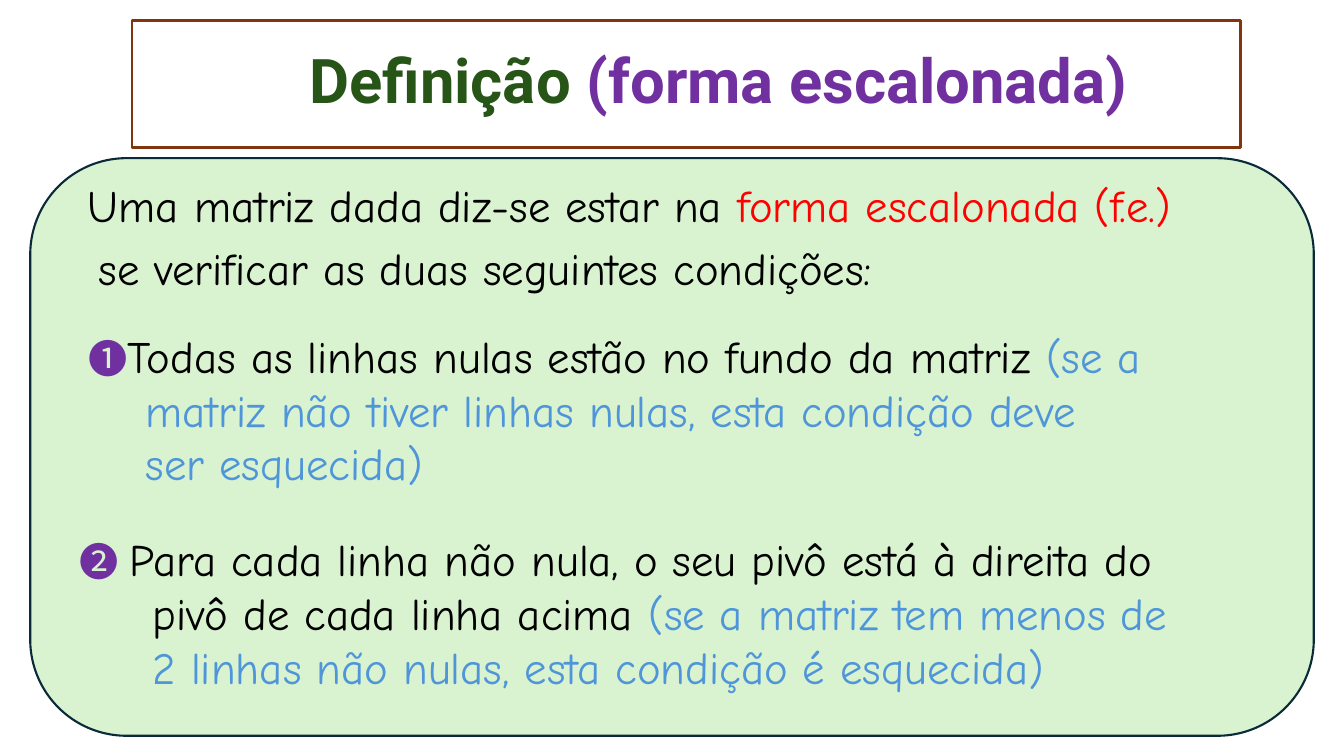
from dataclasses import dataclass

from lxml import etree
from pptx import Presentation
from pptx.dml.color import RGBColor
from pptx.enum.shapes import MSO_SHAPE
from pptx.enum.text import MSO_ANCHOR, PP_ALIGN
from pptx.oxml.ns import qn
from pptx.util import Inches, Pt

ROUNDED = MSO_SHAPE.ROUNDED_RECTANGLE
RECTANGLE = MSO_SHAPE.RECTANGLE
TOP, MIDDLE = MSO_ANCHOR.TOP, MSO_ANCHOR.MIDDLE
LEFT = PP_ALIGN.LEFT

WHITE = RGBColor(0xFF, 0xFF, 0xFF)
BLACK = RGBColor(0x00, 0x00, 0x00)
RED = RGBColor(0xFF, 0x00, 0x00)
PURPLE = RGBColor(0x70, 0x30, 0xA0)
BLUE = RGBColor(0x4E, 0x95, 0xD9)
DARK_GREEN = RGBColor(0x27, 0x54, 0x17)
PALE_GREEN = RGBColor(0xD9, 0xF2, 0xD0)
NAVY = RGBColor(0x09, 0x2A, 0x39)
BROWN = RGBColor(0x80, 0x35, 0x0E)

SLIDE_WIDTH, SLIDE_HEIGHT = Inches(13.33), Inches(7.5)

# Font formats by role
TITLE = {"name": "Roboto", "size": Pt(44), "bold": True}
BODY = {"name": "Comic Neue", "size": Pt(32)}
MARKER = {"name": "Noto Sans CJK JP", "size": Pt(28)}


@dataclass(frozen=True)
class Box:
    """Position and size in percent of the slide's width and height."""
    left: float
    top: float
    width: float
    height: float

    def lengths(self) -> tuple[int, int, int, int]:
        return (across(self.left), down(self.top),
                across(self.width), down(self.height))


@dataclass(frozen=True)
class Span:
    text: str
    color: RGBColor = BLACK
    style: dict = None


@dataclass(frozen=True)
class Line:
    """One line of text; indent and tab in percent of the slide's width."""
    spans: tuple[Span, ...]
    indent: float = 0
    tab: float = 0
    spacing: float = 1.0
    before: float = 0


@dataclass(frozen=True)
class TextBlock:
    box: Box
    lines: tuple[Line, ...]


def across(percent: float) -> int:
    return int(SLIDE_WIDTH * percent / 100)


def down(percent: float) -> int:
    return int(SLIDE_HEIGHT * percent / 100)


def add_panel(slide, kind, box: Box, fill: RGBColor, line: RGBColor, weight: float):
    shape = slide.shapes.add_shape(kind, *box.lengths())
    shape.shadow.inherit = False
    shape.fill.solid()
    shape.fill.fore_color.rgb = fill
    shape.line.color.rgb = line
    shape.line.width = Pt(weight)
    return shape


def add_span(paragraph, span: Span) -> None:
    run = paragraph.add_run()
    run.text = span.text
    run.font.color.rgb = span.color
    style = span.style or BODY
    for attribute, value in style.items():
        setattr(run.font, attribute, value)
    # East Asian typeface, used for the circled digits
    east_asian = etree.SubElement(run.font._element, qn("a:ea"))
    east_asian.set("typeface", style["name"])


def write_lines(shape, lines: tuple[Line, ...], anchor) -> None:
    frame = shape.text_frame
    frame.word_wrap = True
    frame.vertical_anchor = anchor
    for index, line in enumerate(lines):
        paragraph = frame.add_paragraph() if index else frame.paragraphs[0]
        paragraph.alignment = LEFT
        paragraph.line_spacing = line.spacing
        paragraph.space_before = Pt(line.before)
        properties = paragraph._p.get_or_add_pPr()
        properties.set("marL", str(across(line.indent)))
        properties.set("indent", "0")
        if line.tab:
            stops = etree.SubElement(properties, qn("a:tabLst"))
            etree.SubElement(stops, qn("a:tab"), pos=str(across(line.tab)), algn="l")
        for span in line.spans:
            add_span(paragraph, span)


HEADING = Line((Span("Definição ", DARK_GREEN, TITLE),
                Span("(forma escalonada)", PURPLE, TITLE)), indent=12.45, spacing=0.9)

BLOCKS = (
    # Introduction
    TextBlock(Box(4.5, 23.6, 91.07, 33.07), (
        Line((Span("Uma matriz dada diz-se estar na "),
              Span("forma escalonada (f.e.)", RED)), indent=1.3, spacing=0.9, before=13),
        Line((Span("se verificar as duas seguintes condições:"),),
             indent=2.1, spacing=0.9, before=11),
    )),
    # First condition
    TextBlock(Box(5.85, 42.8, 86.42, 26.93), (
        Line((Span("➊", PURPLE, MARKER),
              Span("Todas as linhas nulas estão no fundo da matriz "),
              Span("(se a", BLUE))),
        Line((Span("matriz não tiver linhas nulas, esta condição deve", BLUE),), indent=4.25),
        Line((Span("ser esquecida)", BLUE),), indent=4.25),
    )),
    # Second condition
    TextBlock(Box(5.18, 69.73, 88.37, 26.93), (
        Line((Span("➋\t", PURPLE, MARKER),
              Span("Para cada linha não nula, o seu pivô está à direita do")), tab=4.2),
        Line((Span("pivô de cada linha acima "),
              Span("(se a matriz tem menos de", BLUE)), indent=5.45),
        Line((Span("2 linhas não nulas, esta condição é esquecida)", BLUE),), indent=5.45),
    )),
)


def main() -> None:
    presentation = Presentation()
    presentation.slide_width = SLIDE_WIDTH
    presentation.slide_height = SLIDE_HEIGHT
    slide = presentation.slides.add_slide(presentation.slide_layouts[6])

    # Green panel and title frame
    add_panel(slide, ROUNDED, Box(2.25, 20.93, 95.5, 76.4), PALE_GREEN, NAVY, 1.5)
    title = add_panel(slide, RECTANGLE, Box(9.83, 2.67, 82.45, 16.8), WHITE, BROWN, 2)
    write_lines(title, (HEADING,), MIDDLE)

    # Definition text
    for block in BLOCKS:
        write_lines(slide.shapes.add_textbox(*block.box.lengths()), block.lines, TOP)

    presentation.save("out.pptx")


if __name__ == "__main__":
    main()
